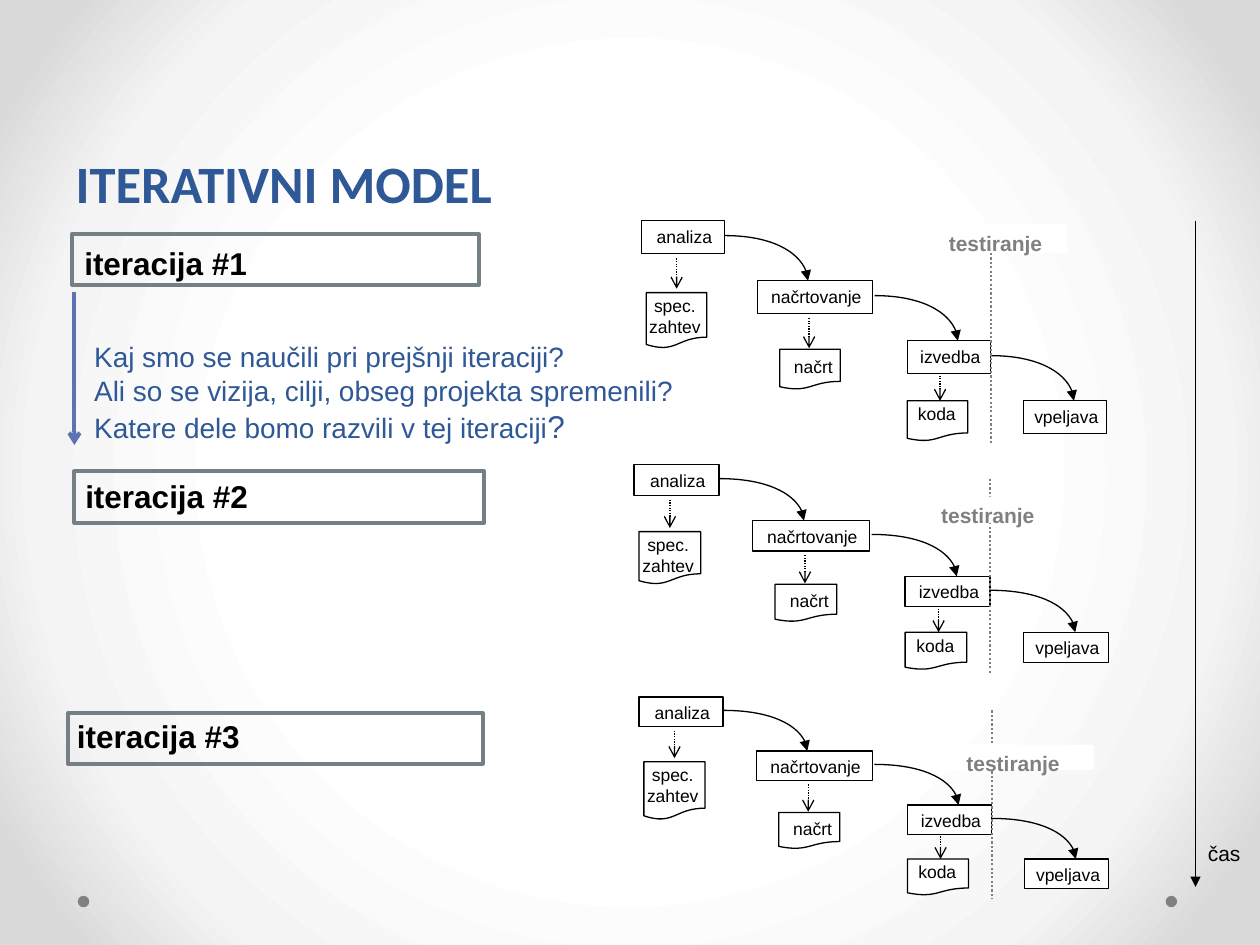
from lxml.etree import SubElement
from pptx import Presentation
from pptx.dml.color import RGBColor
from pptx.enum.dml import MSO_LINE
from pptx.enum.shapes import MSO_CONNECTOR, MSO_SHAPE
from pptx.enum.text import MSO_ANCHOR, PP_ALIGN
from pptx.oxml import parse_xml
from pptx.oxml.ns import nsdecls, qn
from pptx.util import Cm, Pt

BLACK, WHITE, GRAY, BLUE = "000000", "FFFFFF", "808080", "2F5897"
GLOW = [(50, WHITE), (76, "F4F4F4"), (92, "DADADA")]

# All lengths are in cm; those of the phases are measured from the group corner.
STEP, HIGH = 1.21, 0.66
PHASES = [("analiza", 0, 1.68), ("načrtovanje", 2.34, 2.32),
          ("izvedba", 5.36, 1.68), ("vpeljava", 7.7, 1.68)]
CURVES = [1.68, 4.7, 7.04]
CURVE_TOP, CURVE_WIDE = 0.3, 1.68
# text, sheet left, top, height, text left, top
SHEETS = [("spec.\nzahtev", 0.1, 1.45, None, 0, 1.5),
          ("načrt", 2.79, 2.59, 0.81, 2.79, 2.72),
          ("koda", 5.36, 3.63, 0.81, 5.28, 3.68)]
DROPS = [(0.71, 0.76, 1.37), (3.38, 1.96, 2.57), (6.02, 3.12, 3.63)]
TEST_X, TEST_END = 7.04, 4.52

ROUNDS = [
    dict(name="iteracija #1", text=(1.45, 4.8), frame=(1.45, 4.72, 8.2, 1.02),
         corner=(12.93, 4.45), scale=(1, 1), spec=1.12, test=(18.62, 4.52, 2.9, 0.58)),
    dict(name="iteracija #2", text=(1.47, 9.5), frame=(1.5, 9.5, 8.26, 1.04),
         corner=(12.78, 9.37), scale=(1.02, 0.93), spec=1.14, test=(18.44, 10.01, 2.95, 0.53)),
    dict(name="iteracija #3", text=(1.3, 14.33), frame=(1.37, 14.38, 8.36, 1.02),
         corner=(12.88, 14.05), scale=(1.01, 0.9), spec=1.3, test=(18.8, 15.01, 3.25, 0.51)),
]
ASKS = ["Kaj smo se naučili pri prejšnji iteraciji?",
        "Ali so se vizija, cilji, obseg projekta spremenili?",
        "Katere dele bomo razvili v tej iteraciji"]


def rgb(code):
    return RGBColor.from_string(code)


def write(shape, text, size, color=BLACK, bold=False, align=PP_ALIGN.LEFT,
          inset=None, wrap=True):
    frame = shape.text_frame
    frame.text = text
    frame.word_wrap = wrap
    frame.vertical_anchor = MSO_ANCHOR.TOP
    if inset:
        (frame.margin_left, frame.margin_top,
         frame.margin_right, frame.margin_bottom) = map(Cm, inset)
    for para in frame.paragraphs:
        para.alignment = align
        para.font.name, para.font.size, para.font.bold = "Arial", Pt(size), bold
        para.font.color.rgb = rgb(color)


def draw(shapes, kind, place, fill=None, line=None, width=0.75):
    shape = shapes.add_shape(kind, *map(Cm, place))
    shape.shadow.inherit = False
    if fill:
        shape.fill.solid()
        shape.fill.fore_color.rgb = rgb(fill)
    else:
        shape.fill.background()
    if line:
        shape.line.color.rgb = rgb(line)
        shape.line.width = Pt(width)
    else:
        shape.line.fill.background()
    return shape


def note(shapes, place, *args, **opts):
    box = shapes.add_textbox(*map(Cm, place))
    write(box, *args, **opts)
    return box


def point(shape, head):
    """Put an arrowhead at the end of a line that has its colour set."""
    SubElement(next(shape.element.iter(qn("a:ln"))), qn("a:tailEnd"), type=head)


def link(shapes, ends, color, width, head=None, dots=False):
    wire = shapes.add_connector(MSO_CONNECTOR.STRAIGHT, *map(Cm, ends))
    wire.line.color.rgb = rgb(color)
    wire.line.width = Pt(width)
    if dots:
        wire.line.dash_style = MSO_LINE.ROUND_DOT
    if head:
        point(wire, head)
    SubElement(wire.element.spPr, qn("a:effectLst"))


def bend(shapes, left, top, wide, high):
    """Draw a quarter ellipse, right and down, with an arrowhead."""
    spots = [(0.55, 0), (1, 0.45), (1, 1)]
    pen = shapes.build_freeform(Cm(left), Cm(top))
    pen.add_line_segments([(Cm(left + wide * x), Cm(top + high * y)) for x, y in spots],
                          close=False)
    curve = pen.convert_to_shape()
    # The three straight parts become the control points of one Bézier curve.
    parts = list(curve.element.iter(qn("a:lnTo")))
    cubic = SubElement(parts[0].getparent(), qn("a:cubicBezTo"))
    for part in parts:
        cubic.append(part[0])
        part.getparent().remove(part)
    curve.fill.background()
    curve.shadow.inherit = False
    curve.line.color.rgb = rgb(BLACK)
    curve.line.width = Pt(0.75)
    point(curve, "triangle")


def model(shapes, corner, scale, spec, test):
    """Draw the phases of one iteration, scaled from its corner."""
    (left, top), (sx, sy) = corner, scale

    def fit(x, y, wide, high):
        return left + x * sx, top + y * sy, wide * sx, high * sy

    def span(x, start, end):
        return left + x * sx, top + start * sy, left + x * sx, top + end * sy

    for i, (name, x, wide) in enumerate(PHASES):
        box = draw(shapes, MSO_SHAPE.RECTANGLE, fit(x, i * STEP, wide, HIGH), WHITE, BLACK)
        write(box, name, 10, align=PP_ALIGN.CENTER, inset=(0.05, 0.1, 0, 0))
    for i, x in enumerate(CURVES):
        bend(shapes, *fit(x, CURVE_TOP + i * STEP, CURVE_WIDE, STEP - CURVE_TOP))
    link(shapes, span(TEST_X, CURVE_TOP, TEST_END), GRAY, 1.25, dots=True)
    label = draw(shapes, MSO_SHAPE.RECTANGLE, test, WHITE)
    write(label, "testiranje", 12, GRAY, True, PP_ALIGN.CENTER)
    for name, x, y, high, tx, ty in SHEETS:
        draw(shapes, MSO_SHAPE.FLOWCHART_DOCUMENT, fit(x, y, 1.22, high or spec), WHITE, BLACK)
        note(shapes, fit(tx, ty, 1.35, 0.48), name, 10,
             align=PP_ALIGN.CENTER, inset=(0, 0, 0, 0))
    for drop in DROPS:
        link(shapes, span(*drop), BLACK, 0.75, "arrow", dots=True)


def paint(slide):
    """Fill the background with a round gradient."""
    slide.background.fill.gradient()
    old = next(slide.element.iter(qn("a:gradFill")))
    stops = "".join(f'<a:gs pos="{pos * 1000}"><a:srgbClr val="{code}"/></a:gs>'
                    for pos, code in GLOW)
    old.getparent().replace(old, parse_xml(
        f'<a:gradFill {nsdecls("a")} rotWithShape="1"><a:gsLst>{stops}</a:gsLst>'
        '<a:path path="circle"><a:fillToRect l="50000" t="50000" r="50000" b="50000"/>'
        '</a:path></a:gradFill>'))


def main():
    deck = Presentation()
    deck.slide_width, deck.slide_height = Cm(25.4), Cm(19.05)
    slide = deck.slides.add_slide(deck.slide_layouts[5])
    shapes = slide.shapes
    paint(slide)
    for x in (23.5, 1.57):
        draw(shapes, MSO_SHAPE.OVAL, (x, 18.06, 0.23, 0.23), GRAY)

    title = shapes.title
    title.left, title.top, title.width, title.height = map(Cm, (1.27, 0, 22.86, 4.45))
    write(title, "ITERATIVNI MODEL", 30, BLUE, True)
    title.text_frame.vertical_anchor = MSO_ANCHOR.BOTTOM
    head = title.text_frame.paragraphs[0]
    head.font.name, head.line_spacing = "Calibri", Pt(58)

    for turn in ROUNDS:
        model(shapes.add_group_shape().shapes, turn["corner"], turn["scale"],
              turn["spec"], turn["test"])
        note(shapes, (*turn["text"], 3.84, 1.02), turn["name"], 18, bold=True, wrap=False)
        draw(shapes, MSO_SHAPE.RECTANGLE, turn["frame"], line="758085", width=2.25)

    link(shapes, (1.5, 5.89, 1.5, 8.97), "5C72B2", 2.25, "arrow")
    asks = note(shapes, (-0.89, 6.73, 14.86, 2.39), "\n".join(ASKS), 16, BLUE)
    lines = asks.text_frame.paragraphs
    for para in lines:
        para.level = 2
        para._p.get_or_add_pPr().set("marL", str(Cm(2.54)))
    mark = lines[-1].add_run()
    mark.text, mark.font.size = "?", Pt(18)

    link(shapes, (24.1, 4.45, 24.1, 17.88), BLACK, 1, "triangle")
    note(shapes, (24.1, 16.81, 1.68, 0.94), "čas", 12)
    deck.save("out.pptx")


if __name__ == "__main__":
    main()
